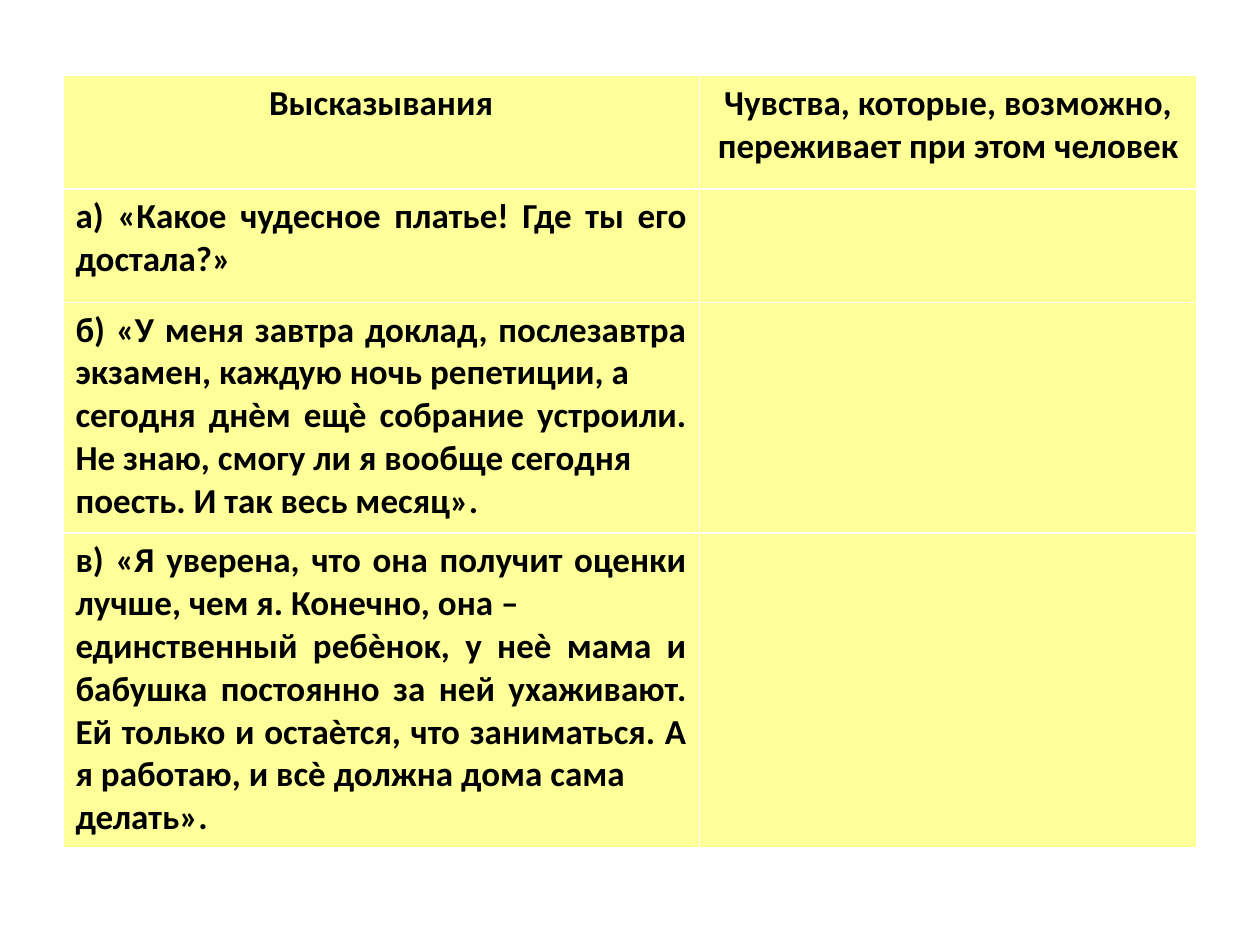
import pptx
import pptx.dml.color
import pptx.enum.text
import pptx.util

Inches = pptx.util.Inches
ALIGN = pptx.enum.text.PP_ALIGN

COLORS = {"cell": "FFFF99", "text": "000000"}
BLANK_LAYOUT = 6

COLUMN_WIDTHS = [5.05, 3.95]
ROW_HEIGHTS = [0.9, 0.9, 1.83, 2.5]

HEADINGS = ["Высказывания", "Чувства, которые, возможно, переживает при этом человек"]
STATEMENTS = [
    ["а) «Какое чудесное платье! Где ты его достала?»"],
    [
        "б) «У меня завтра доклад, послезавтра экзамен, каждую ночь репетиции, а",
        "сегодня днѐм ещѐ собрание устроили. Не знаю, смогу ли я вообще сегодня",
        "поесть. И так весь месяц».",
    ],
    [
        "в) «Я уверена, что она получит оценки лучше, чем я. Конечно, она –",
        "единственный ребѐнок, у неѐ мама и бабушка постоянно за ней ухаживают. "
        "Ей только и остаѐтся, что заниматься. А я работаю, и всѐ должна дома сама",
        "делать».",
    ],
]


def rgb(name):
    return pptx.dml.color.RGBColor.from_string(COLORS[name])


class PageBuilder:
    font = {"name": "Calibri", "size": pptx.util.Pt(20), "bold": True}

    def __init__(self, page):
        self.page = page

    def add_table(self, left, top, widths, heights):
        """Add a table with plain filled cells; its style draws the white rules."""
        table = self.page.shapes.add_table(
            len(heights), len(widths), Inches(left), Inches(top),
            Inches(sum(widths)), Inches(sum(heights)),
        ).table
        table.horz_banding = False
        for column, width in zip(table.columns, widths):
            column.width = Inches(width)
        for row, height in zip(table.rows, heights):
            row.height = Inches(height)
        for cell in table.iter_cells():
            cell.fill.solid()
            cell.fill.fore_color.rgb = rgb("cell")
        return table

    def write_cell(self, cell, lines, alignment):
        cell.text_frame.text = "\n".join(lines)
        for para in cell.text_frame.paragraphs:
            para.alignment = alignment
            for span in para.runs:
                for key, value in self.font.items():
                    setattr(span.font, key, value)
                span.font.color.rgb = rgb("text")


def main():
    deck = pptx.Presentation()
    deck.slide_width, deck.slide_height = Inches(10), Inches(7.5)
    builder = PageBuilder(deck.slides.add_slide(deck.slide_layouts[BLANK_LAYOUT]))

    table = builder.add_table(0.5, 0.6, COLUMN_WIDTHS, ROW_HEIGHTS)
    for column, heading in enumerate(HEADINGS):
        builder.write_cell(table.cell(0, column), [heading], ALIGN.CENTER)
    for row, lines in enumerate(STATEMENTS, start=1):
        builder.write_cell(table.cell(row, 0), lines, ALIGN.JUSTIFY)

    deck.save("out.pptx")


if __name__ == "__main__":
    main()
